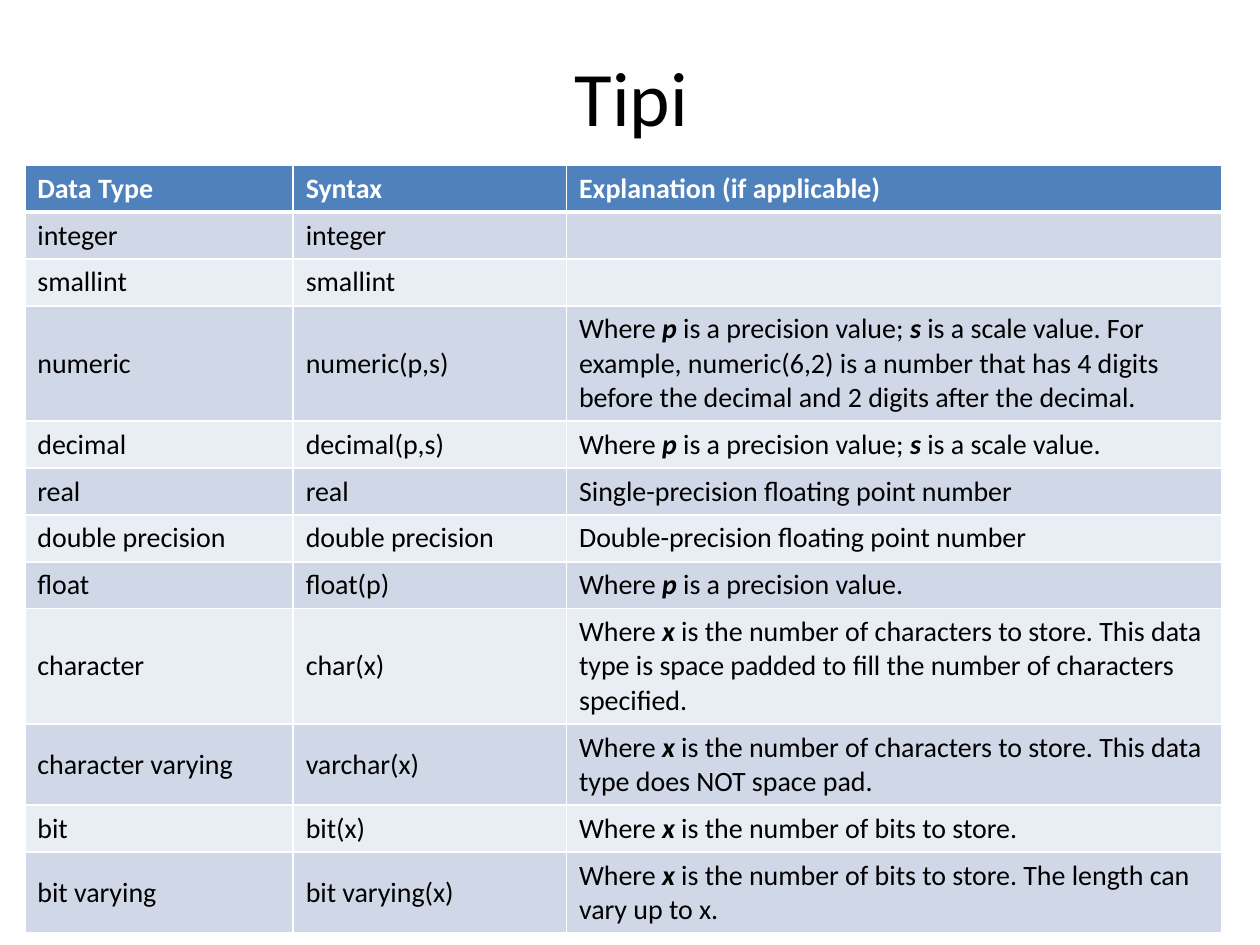
"""Build the slide that lists SQL data types with their syntax and meaning."""
from dataclasses import dataclass

from lxml.etree import SubElement
from pptx import Presentation
from pptx.dml.color import RGBColor
from pptx.enum.text import MSO_ANCHOR, PP_ALIGN
from pptx.oxml.ns import qn
from pptx.util import Cm, Pt

FONT = "Calibri"
COLORS = {
    "header": "4F81BD",
    "odd": "D0D8E8",
    "even": "E9EDF4",
    "rule": "FFFFFF",
    "header_text": "FFFFFF",
    "text": "000000",
}
COLUMN_WIDTHS = (5.41, 5.51, 13.21)
LINE_HEIGHT = 0.69
ROW_PADDING = 0.25
TEXT_SIZE = 16
TITLE_SIZE = 44


@dataclass(frozen=True)
class TypeRow:
    """One table row; asterisks in the explanation enclose emphasised words."""

    name: str
    syntax: str
    explanation: str = ""
    lines: int = 1


ROWS = (
    TypeRow("Data Type", "Syntax", "Explanation (if applicable)"),
    TypeRow("integer", "integer"),
    TypeRow("smallint", "smallint"),
    TypeRow(
        "numeric",
        "numeric(p,s)",
        "Where *p* is a precision value; *s* is a scale value. For example, numeric(6,2) "
        "is a number that has 4 digits before the decimal and 2 digits after the decimal.",
        3,
    ),
    TypeRow("decimal", "decimal(p,s)", "Where *p* is a precision value; *s* is a scale value."),
    TypeRow("real", "real", "Single-precision floating point number"),
    TypeRow("double precision", "double precision", "Double-precision floating point number"),
    TypeRow("float", "float(p)", "Where *p* is a precision value."),
    TypeRow(
        "character",
        "char(x)",
        "Where *x* is the number of characters to store. This data type is space padded "
        "to fill the number of characters specified.",
        3,
    ),
    TypeRow(
        "character varying",
        "varchar(x)",
        "Where *x* is the number of characters to store. This data type does NOT space pad.",
        2,
    ),
    TypeRow("bit", "bit(x)", "Where *x* is the number of bits to store."),
    TypeRow(
        "bit varying",
        "bit varying(x)",
        "Where *x* is the number of bits to store. The length can vary up to x.",
        2,
    ),
)


def add_span(para, text: str, size: float, color: str, bold: bool = False, italic: bool = False) -> None:
    """Add one formatted run to a paragraph."""
    span = para.add_run()
    span.text = text
    span.font.name = FONT
    span.font.size = Pt(size)
    span.font.bold = bold
    span.font.italic = italic
    span.font.color.rgb = RGBColor.from_string(COLORS[color])


def add_borders(cell, top: float, bottom: float) -> None:
    """Draw the four cell borders, with the given top and bottom widths in points."""
    properties = cell._tc.get_or_add_tcPr()
    for side, width in (("L", 1), ("R", 1), ("T", top), ("B", bottom)):
        line = SubElement(properties, qn(f"a:ln{side}"), w=str(Pt(width)))
        fill = SubElement(line, qn("a:solidFill"))
        SubElement(fill, qn("a:srgbClr"), val=COLORS["rule"])


def fill_cell(cell, text: str, row_index: int) -> None:
    """Write and format one cell according to its row."""
    is_header = row_index == 0
    add_borders(cell, 3 if row_index == 1 else 1, 3 if is_header else 1)
    shade = "header" if is_header else ("even", "odd")[row_index % 2]
    cell.fill.solid()
    cell.fill.fore_color.rgb = RGBColor.from_string(COLORS[shade])
    cell.vertical_anchor = MSO_ANCHOR.MIDDLE
    para = cell.text_frame.paragraphs[0]
    if not text:
        SubElement(para._p, qn("a:endParaRPr"), sz=str(TEXT_SIZE * 100))
        return
    color = "header_text" if is_header else "text"
    for index, part in enumerate(text.split("*")):
        emphasised = index % 2 == 1
        add_span(para, part, TEXT_SIZE, color, is_header or emphasised, emphasised)


def add_title(page, text: str) -> None:
    """Place and fill the title placeholder."""
    box = page.shapes.title
    box.left, box.top, box.width, box.height = Cm(1.3), Cm(0.33), Cm(22.86), Cm(3.18)
    box.text_frame.vertical_anchor = MSO_ANCHOR.MIDDLE
    para = box.text_frame.paragraphs[0]
    para.alignment = PP_ALIGN.CENTER
    add_span(para, text, TITLE_SIZE, "text")


def add_type_table(page, rows: tuple[TypeRow, ...]) -> None:
    """Add the table, with each row as high as its lines need."""
    heights = [ROW_PADDING + LINE_HEIGHT * row.lines for row in rows]
    table = page.shapes.add_table(
        len(rows), len(COLUMN_WIDTHS), Cm(0.5), Cm(3.33), Cm(sum(COLUMN_WIDTHS)), Cm(sum(heights))
    ).table
    for column, width in zip(table.columns, COLUMN_WIDTHS):
        column.width = Cm(width)
    for row_index, (row, height) in enumerate(zip(rows, heights)):
        table.rows[row_index].height = Cm(height)
        for column_index, text in enumerate((row.name, row.syntax, row.explanation)):
            fill_cell(table.cell(row_index, column_index), text, row_index)


def main() -> None:
    """Create the deck and save it."""
    deck = Presentation()
    deck.slide_width, deck.slide_height = Cm(25.4), Cm(19.05)
    page = deck.slides.add_slide(deck.slide_layouts[5])
    add_title(page, "Tipi")
    add_type_table(page, ROWS)
    deck.save("out.pptx")


if __name__ == "__main__":
    main()
